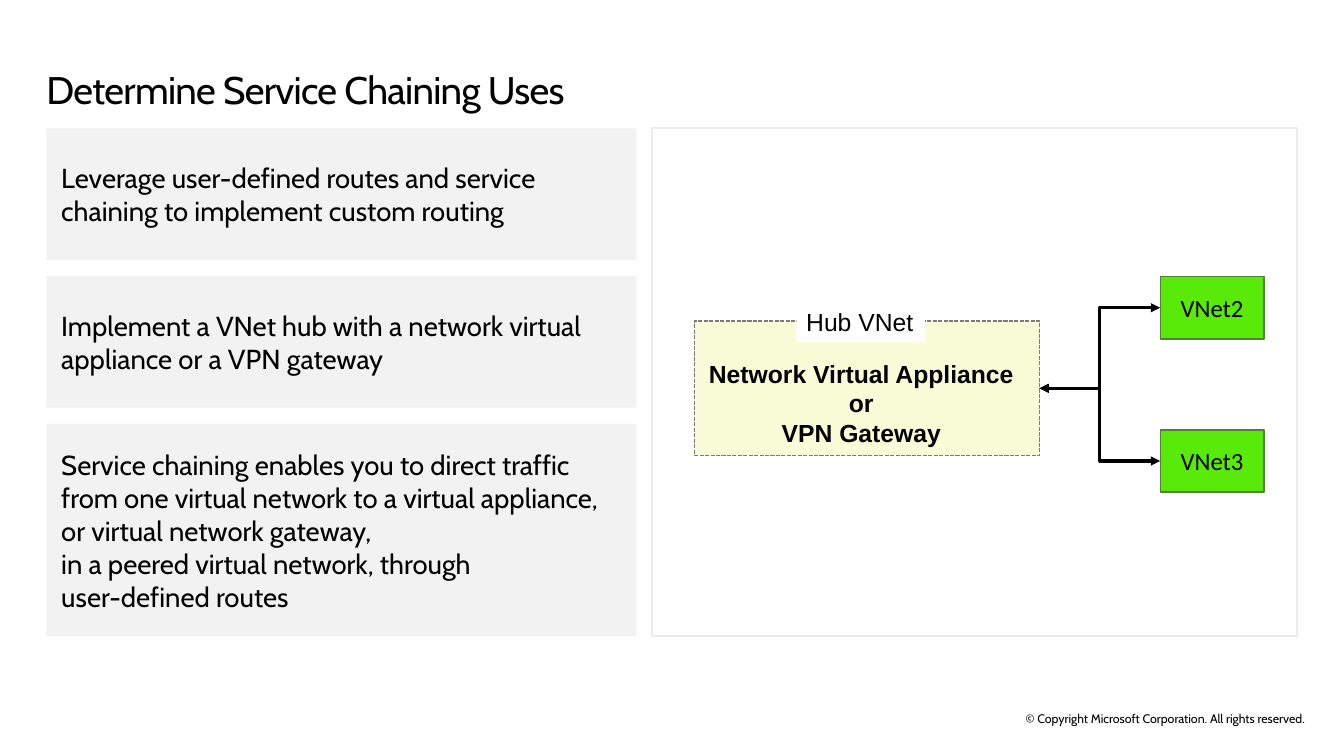
import pptx
import pptx.util
import pptx.dml.color
import pptx.enum.dml
import pptx.enum.shapes
import pptx.enum.text
import pptx.oxml.ns
import lxml.etree

Pt = pptx.util.Pt
Align = pptx.enum.text.PP_ALIGN
Anchor = pptx.enum.text.MSO_ANCHOR
qn = pptx.oxml.ns.qn

HEX = {
    "ink": "000000", "card": "F2F2F2", "frame": "EBEBEB", "paper": "FFFFFF",
    "hub": "F9FDD7", "dash": "7A7A7A", "net": "5AEA0A", "edge": "538035",
}
# Grid of 136 columns by 76.5 rows
COLS, ROWS = 136, 76.5
WIDTH, HEIGHT = pptx.util.Inches(13.6), pptx.util.Inches(7.65)


def tint(name):
    return pptx.dml.color.RGBColor.from_string(HEX[name])


def place(box):
    """Turn columns and rows into slide lengths."""
    left, top, wide, high = box
    return [round(left / COLS * WIDTH), round(top / ROWS * HEIGHT),
            round(wide / COLS * WIDTH), round(high / ROWS * HEIGHT)]


def write(shape, text, font="Cabin", size=20, bold=False, align=Align.LEFT,
          anchor=Anchor.MIDDLE, inset=(0.1, 0.05), wrap=True,
          lead=None, track=None):
    frame = shape.text_frame
    frame.word_wrap = wrap
    frame.vertical_anchor = anchor
    frame.margin_left = frame.margin_right = pptx.util.Inches(inset[0])
    frame.margin_top = frame.margin_bottom = pptx.util.Inches(inset[1])
    frame.text = text
    for para in frame.paragraphs:
        para.alignment = align
        if lead:
            para.line_spacing = Pt(lead)
        for run in para.runs:
            run.font.name = font
            run.font.size = Pt(size)
            run.font.bold = bold
            run.font.color.rgb = tint("ink")
            if track:
                run.font._element.set("spc", str(round(track * 100)))


def label(slide, box, text, **form):
    write(slide.shapes.add_textbox(*place(box)), text, **form)


def block(slide, box, fill=None, line=None, width=1, dash=None):
    shape = slide.shapes.add_shape(
        pptx.enum.shapes.MSO_SHAPE.RECTANGLE, *place(box))
    shape.shadow.inherit = False
    if fill:
        shape.fill.solid()
        shape.fill.fore_color.rgb = tint(fill)
    else:
        shape.fill.background()
    if line:
        shape.line.color.rgb = tint(line)
        shape.line.width = Pt(width)
        if dash:
            shape.line.dash_style = dash
    else:
        shape.line.fill.background()
    return shape


def link(slide, start, end):
    """Two-headed elbow from the right side of start to the left of end."""
    wire = slide.shapes.add_connector(
        pptx.enum.shapes.MSO_CONNECTOR.ELBOW, 0, 0, 0, 0)
    wire.begin_connect(start, 3)
    wire.end_connect(end, 1)
    wire.line.color.rgb = tint("ink")
    wire.line.width = Pt(2.25)
    props = wire._element.spPr
    for tag in ("a:headEnd", "a:tailEnd"):
        lxml.etree.SubElement(props.find(qn("a:ln")), qn(tag), type="triangle")
    lxml.etree.SubElement(props, qn("a:effectLst"))


def cards(slide, box, items, gap=1.65):
    left, top, wide, _ = box
    for high, text in items:
        card = block(slide, (left, top, wide, high), fill="card")
        write(card, text, inset=(0.15, 0.1))
        top += high + gap


def diagram(slide, box):
    left, top, _, _ = box

    def within(col, row, wide, high):
        return left + col, top + row, wide, high

    block(slide, box, line="frame", width=1.5)

    # Hub and its tag
    hub = block(slide, within(4.3, 19.5, 34.9, 13.6), fill="hub", line="dash",
                dash=pptx.enum.dml.MSO_LINE.SQUARE_DOT)
    tag = block(slide, within(14.6, 17.6, 13, 4), fill="paper")
    write(tag, "Hub VNet", font="Arial", size=18, wrap=False,
          anchor=Anchor.TOP)

    # Spoke networks, each joined to the hub
    for row, name in ((15, "VNet2"), (30.5, "VNet3")):
        net = block(slide, within(51.4, row, 10.5, 6.3), fill="net",
                    line="edge")
        write(net, name, font="Calibri", size=18, align=Align.CENTER)
        link(slide, hub, net)

    label(slide, within(3.2, 22.8, 35.9, 13.1),
          "Network Virtual Appliance or\nVPN Gateway", font="Arial", size=18,
          bold=True, align=Align.CENTER, anchor=Anchor.TOP)


def main():
    deck = pptx.Presentation()
    deck.slide_width, deck.slide_height = WIDTH, HEIGHT
    slide = deck.slides.add_slide(deck.slide_layouts[6])

    # Footer and title
    label(slide, (99.8, 72, 36.2, 1.5),
          "© Copyright Microsoft Corporation. All rights reserved.",
          size=9, align=Align.CENTER, inset=(0, 0))
    label(slide, (4.7, 6.9, 126.5, 4.5), "Determine Service Chaining Uses",
          size=28, anchor=Anchor.TOP, inset=(0, 0), lead=32, track=-0.5)

    # Left column of points, right panel
    cards(slide, (4.7, 13, 59.7, 51.4), [
        (13.3, "Leverage user-defined routes and service chaining to "
               "implement custom routing"),
        (13.3, "Implement a VNet hub with a network virtual appliance "
               "or a VPN gateway"),
        (21.5, "Service chaining enables you to direct traffic from one "
               "virtual network to a virtual appliance, or virtual network "
               "gateway,\vin a peered virtual network, through\v"
               "user-defined routes"),
    ])
    diagram(slide, (66, 13, 65.3, 51.4))
    deck.save("out.pptx")


if __name__ == "__main__":
    main()
